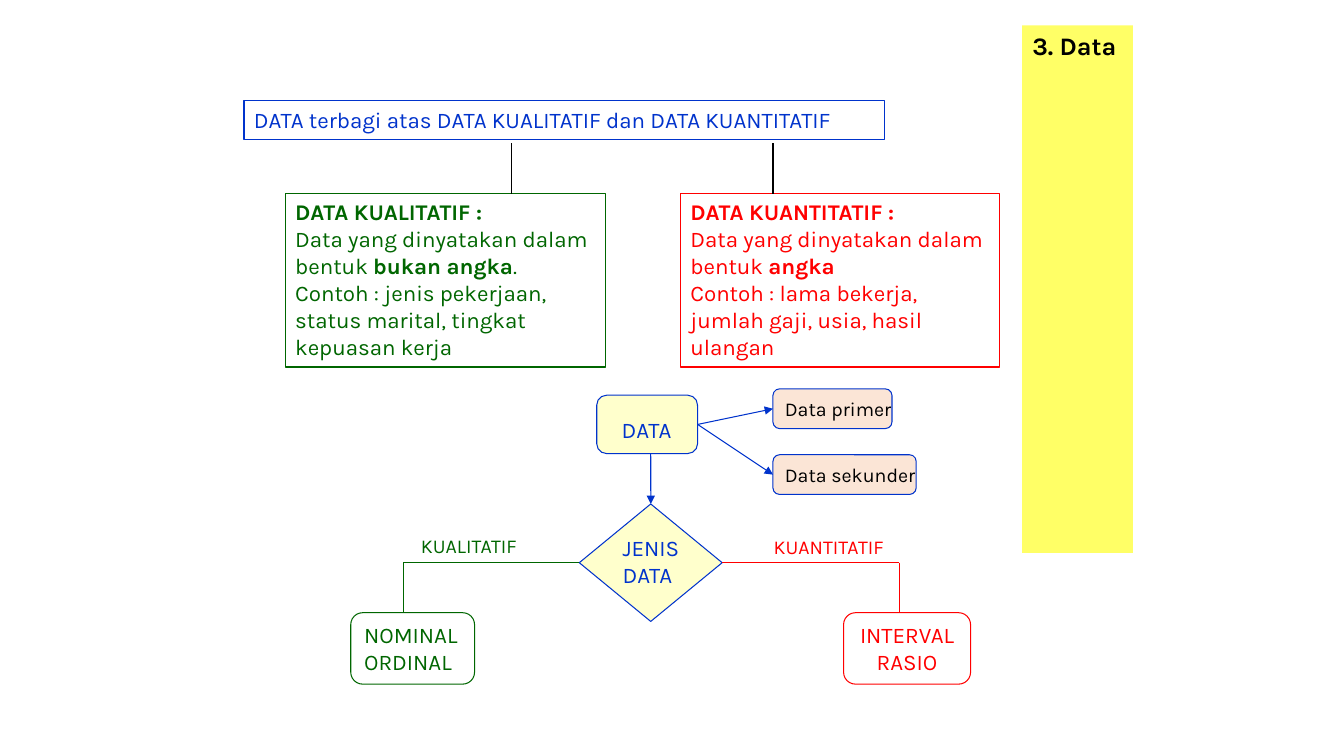
from pptx import Presentation
from pptx.dml.color import RGBColor
from pptx.enum.shapes import MSO_CONNECTOR, MSO_SHAPE
from pptx.enum.text import MSO_ANCHOR, MSO_AUTO_SIZE, PP_ALIGN
from pptx.oxml.ns import qn
from pptx.util import Cm, Pt
from lxml import etree

STRAIGHT = MSO_CONNECTOR.STRAIGHT
RECTANGLE, ROUNDED = MSO_SHAPE.RECTANGLE, MSO_SHAPE.ROUNDED_RECTANGLE
DECISION, PROCESS = MSO_SHAPE.FLOWCHART_DECISION, MSO_SHAPE.FLOWCHART_ALTERNATE_PROCESS
TOP, MIDDLE = MSO_ANCHOR.TOP, MSO_ANCHOR.MIDDLE
LEFT, CENTER = PP_ALIGN.LEFT, PP_ALIGN.CENTER
GROW, FIXED = MSO_AUTO_SIZE.SHAPE_TO_FIT_TEXT, MSO_AUTO_SIZE.NONE
TOP_SIDE, LEFT_SIDE, RIGHT_SIDE = 0, 1, 3
COLORS = {
    "black": "000000", "blue": "0033CC", "green": "006600", "red": "FF0000",
    "yellow": "FFFF66", "cream": "FFFFCC", "peach": "FBE5D6",
}


class DiagramSlide:
    """Draws the parts of a data diagram on one slide in a shared style."""

    font_name = "Karla"
    line_width = Pt(0.75)

    def __init__(self, presentation):
        self.slide = presentation.slides.add_slide(presentation.slide_layouts[5])

    def color(self, name):
        return RGBColor.from_string(COLORS[name])

    def text(self, shape, lines, color, size=16, align=LEFT, wrap=False, anchor=TOP, fit=GROW):
        """Fill a shape with paragraphs, where *stars* mark bold words."""
        frame = shape.text_frame
        frame.word_wrap, frame.auto_size, frame.vertical_anchor = wrap, fit, anchor
        for index, line in enumerate(lines):
            paragraph = frame.add_paragraph() if index else frame.paragraphs[0]
            paragraph.alignment = align
            paragraph.font.name = self.font_name
            paragraph.font.size = Pt(size)
            paragraph.font.color.rgb = self.color(color)
            for part, words in enumerate(line.split("*")):
                if words:
                    run = paragraph.add_run()
                    run.text = words
                    run.font.bold = part % 2 == 1

    def title(self, box, words):
        shape = self.slide.shapes.title
        shape.left, shape.top, shape.width, shape.height = map(Cm, box)
        shape.fill.solid()
        shape.fill.fore_color.rgb = self.color("yellow")
        self.text(shape, [words], "black", 18)

    def shape(self, kind, box, line, fill=None):
        shape = self.slide.shapes.add_shape(kind, *map(Cm, box))
        shape.shadow.inherit = False
        shape.line.color.rgb = self.color(line)
        shape.line.width = self.line_width
        if fill:
            shape.fill.solid()
            shape.fill.fore_color.rgb = self.color(fill)
        else:
            shape.fill.background()
        return shape

    def label(self, box, lines, color, **style):
        self.text(self.slide.shapes.add_textbox(*map(Cm, box)), lines, color, **style)

    def line(self, start, end, color, begin=None, finish=None, arrow=False):
        connector = self.slide.shapes.add_connector(STRAIGHT, *map(Cm, start + end))
        connector.line.color.rgb = self.color(color)
        connector.line.width = self.line_width
        if begin:
            connector.begin_connect(*begin)
        if finish:
            connector.end_connect(*finish)
        properties = connector.element.spPr
        if arrow:
            etree.SubElement(properties.find(qn("a:ln")), qn("a:tailEnd"), type="triangle")
        etree.SubElement(properties, qn("a:effectLst"))


def main():
    presentation = Presentation()
    presentation.slide_width, presentation.slide_height = Cm(33.87), Cm(19.05)
    diagram = DiagramSlide(presentation)
    diagram.title((25.76, 0.64, 2.79, 1.02), "*3. Data*")

    heading = diagram.shape(RECTANGLE, (6.15, 2.54, 16.15, 0.97), "blue")
    diagram.text(heading, ["DATA terbagi atas DATA KUALITATIF dan DATA KUANTITATIF"], "blue")
    definitions = [
        (7.19, 8.08, 12.9, "green", [
            "*DATA KUALITATIF :*",
            "Data yang dinyatakan dalam bentuk *bukan angka*.",
            "Contoh : jenis pekerjaan, status marital, tingkat kepuasan kerja"]),
        (17.15, 8.05, 19.48, "red", [
            "*DATA KUANTITATIF :*",
            "Data yang dinyatakan dalam bentuk *angka*",
            "Contoh : lama bekerja, jumlah gaji, usia, hasil ulangan"]),
    ]
    for left, width, line_x, color, lines in definitions:
        definition = diagram.shape(RECTANGLE, (left, 4.88, width, 4.37), color)
        diagram.text(definition, lines, color, wrap=True)
        diagram.line((line_x, 3.61), (line_x, 4.88), "black")

    data = diagram.shape(ROUNDED, (15.04, 9.96, 2.54, 1.47), "blue", "cream")
    diagram.label((14.81, 10.36, 2.97, 0.94), ["DATA"], "blue", align=CENTER, wrap=True)
    decision = diagram.shape(DECISION, (14.6, 12.7, 3.6, 2.96), "blue", "cream")
    diagram.label((15.44, 13.34, 1.96, 1.63), ["JENIS", "DATA"], "blue")
    diagram.line((16.4, 11.43), (16.4, 12.7), "blue", finish=(decision, TOP_SIDE), arrow=True)

    for top, width, words in [(9.8, 3, "Data primer"), (11.46, 3.61, "Data sekunder")]:
        source = diagram.shape(ROUNDED, (19.48, top, width, 1), "blue", "peach")
        diagram.text(source, [words], "black", 14, anchor=MIDDLE, fit=FIXED)
        diagram.line((17.58, 10.7), (19.48, top + 0.5), "blue",
                     (data, RIGHT_SIDE), (source, LEFT_SIDE), arrow=True)

    branches = [
        ("green", LEFT_SIDE, 14.6, 10.16, (10.36, 13.34, 3.15, 0.84), "KUALITATIF",
         (8.84, 15.44, 3.12, 1.8), ["NOMINAL", "ORDINAL"], LEFT),
        ("red", RIGHT_SIDE, 18.2, 22.66, (19.25, 13.36, 3.53, 0.84), "KUANTITATIF",
         (21.26, 15.44, 3.2, 1.8), ["INTERVAL", "RASIO"], CENTER),
    ]
    for color, side, start_x, corner_x, label_box, label, scale_box, scales, align in branches:
        diagram.line((start_x, 14.18), (corner_x, 14.18), color, begin=(decision, side))
        diagram.line((corner_x, 14.18), (corner_x, 15.44), color)
        diagram.label(label_box, [label], color, size=14)
        scale = diagram.shape(PROCESS, scale_box, color)
        diagram.text(scale, scales, color, align=align)

    presentation.save("out.pptx")


if __name__ == "__main__":
    main()
